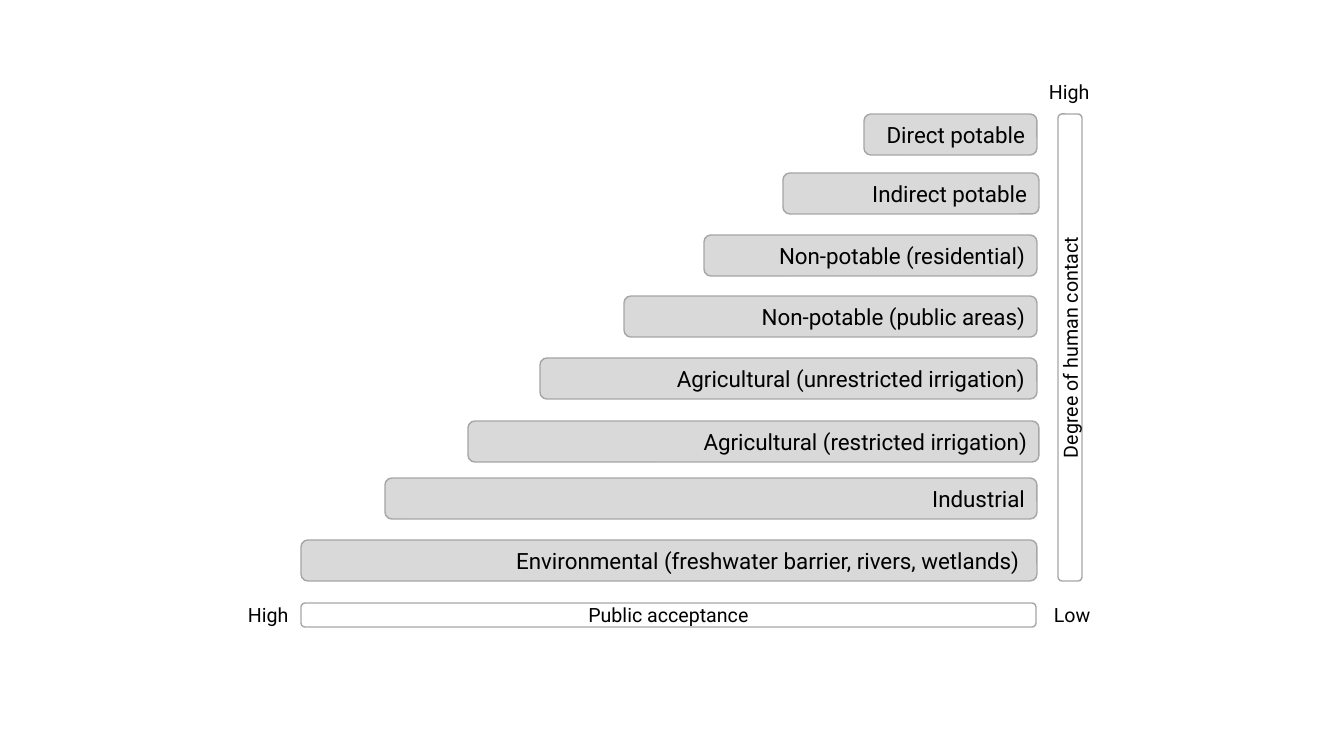
import pptx
import pptx.util
from pptx.dml.color import RGBColor
from pptx.enum.shapes import MSO_SHAPE
from pptx.enum.text import MSO_ANCHOR, MSO_AUTO_SIZE, PP_ALIGN

PX = 914400 / 100.8  # EMU in one px
FONT = "Roboto"
BLACK = RGBColor(0x00, 0x00, 0x00)
WHITE = RGBColor(0xFF, 0xFF, 0xFF)
BAR_GREY = RGBColor(0xD9, 0xD9, 0xD9)
EDGE_GREY = RGBColor(0xA6, 0xA6, 0xA6)

BAR_HEIGHT = 41
AXIS_THICKNESS = 24
LABEL_HEIGHT = 34

# Text, then left, top and right edge within the staircase
REUSE_BARS = [
    ("Direct potable", 563, 0, 736),
    ("Indirect potable", 482, 59, 738),
    ("Non-potable (residential)", 403, 121, 736),
    ("Non-potable (public areas)", 323, 182, 736),
    ("Agricultural (unrestricted irrigation)", 239, 244, 736),
    ("Agricultural (restricted irrigation)", 167, 307, 738),
    ("Industrial", 84, 364, 736),
    ("Environmental (freshwater barrier, rivers, wetlands) ", 0, 426, 736),
]


def emu(*lengths):
    return [pptx.util.Emu(round(length * PX)) for length in lengths]


def write(shape, text, size, align):
    para = shape.text_frame.paragraphs[0]
    para.text = text
    para.alignment = align
    para.font.size = pptx.util.Pt(size)
    para.font.name = FONT
    para.font.color.rgb = BLACK


def add_bar(page, box, text, fill, size, align):
    bar = page.shapes.add_shape(MSO_SHAPE.ROUNDED_RECTANGLE, *emu(*box))
    bar.shadow.inherit = False
    bar.fill.solid()
    bar.fill.fore_color.rgb = fill
    bar.line.color.rgb = EDGE_GREY
    bar.line.width = pptx.util.Pt(1)
    bar.text_frame.word_wrap = True
    bar.text_frame.vertical_anchor = MSO_ANCHOR.MIDDLE
    write(bar, text, size, align)
    return bar


def add_label(page, left, top, width, text):
    label = page.shapes.add_textbox(*emu(left, top, width, LABEL_HEIGHT))
    label.text_frame.word_wrap = True
    label.text_frame.auto_size = MSO_AUTO_SIZE.SHAPE_TO_FIT_TEXT
    write(label, text, 14, PP_ALIGN.LEFT)


def add_staircase(page, left, top):
    for text, start, offset, end in REUSE_BARS:
        box = (left + start, top + offset, end - start, BAR_HEIGHT)
        add_bar(page, box, text, BAR_GREY, 16, PP_ALIGN.RIGHT)


def add_acceptance_axis(page, left, top, width):
    add_bar(page, (left, top, width, AXIS_THICKNESS), "Public acceptance",
            WHITE, 14, PP_ALIGN.CENTER)
    add_label(page, left - 63, top - 5, 75, "High")
    add_label(page, left + width + 8, top - 5, 64, "Low")


def add_contact_axis(page, left, top, height):
    axis = add_bar(page, (left, top, AXIS_THICKNESS, height),
                   "Degree of human contact", WHITE, 14, PP_ALIGN.CENTER)
    # Text reads upwards
    axis.text_frame._txBody.bodyPr.set("vert", "vert270")
    add_label(page, left - 19, top - 39, 75, "High")


def main():
    deck = pptx.Presentation()
    deck.slide_width, deck.slide_height = emu(1344, 756)
    page = deck.slides.add_slide(deck.slide_layouts[6])
    add_acceptance_axis(page, 301, 603, 735)
    add_contact_axis(page, 1058, 114, 467)
    add_staircase(page, 301, 114)
    deck.save("out.pptx")


if __name__ == "__main__":
    main()
